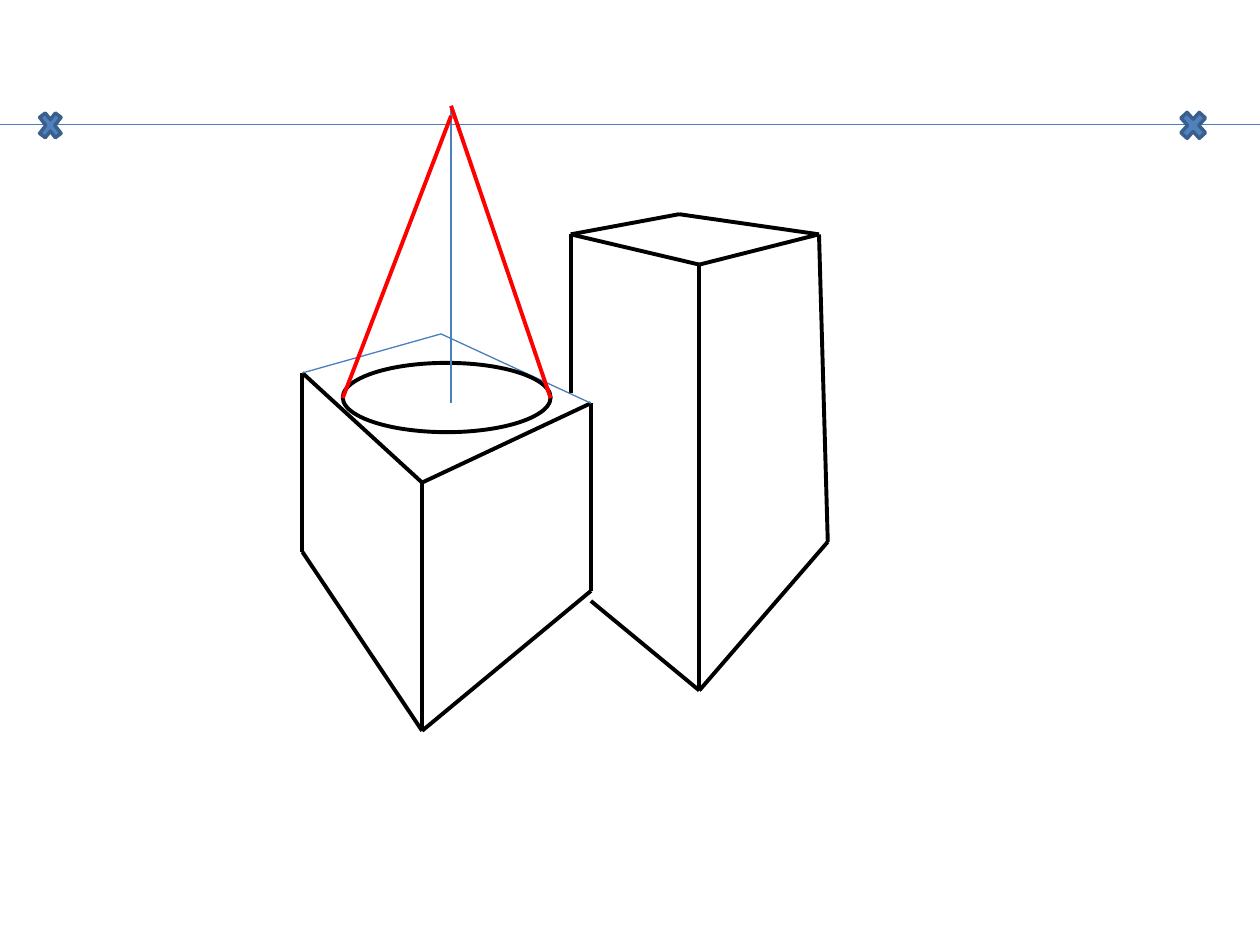
"""Build a two-point perspective drawing of two boxes and a cone."""
from dataclasses import dataclass

from lxml.etree import SubElement
from pptx import Presentation
from pptx.dml.color import RGBColor
from pptx.enum.shapes import MSO_CONNECTOR, MSO_SHAPE
from pptx.oxml.ns import qn
from pptx.util import Inches, Pt


@dataclass(frozen=True)
class Theme:
    ink: RGBColor = RGBColor(0x00, 0x00, 0x00)
    guide: RGBColor = RGBColor(0x4B, 0x7E, 0xBC)
    cone: RGBColor = RGBColor(0xFF, 0x00, 0x00)
    mark_fill: RGBColor = RGBColor(0x4F, 0x81, 0xBD)
    mark_edge: RGBColor = RGBColor(0x3A, 0x5F, 0x8C)
    thin: float = 0.75
    medium: float = 2
    thick: float = 2.25


theme = Theme()
deck = Presentation()
deck.slide_width, deck.slide_height = Inches(10), Inches(7.5)
page = deck.slides.add_slide(deck.slide_layouts[6])


def draw_line(start, end, color=theme.ink, width=theme.thick):
    ends = [Inches(value) for value in (*start, *end)]
    edge = page.shapes.add_connector(MSO_CONNECTOR.STRAIGHT, *ends)
    edge.line.color.rgb = color
    edge.line.width = Pt(width)
    SubElement(edge._element.spPr, qn("a:effectLst"))


def draw_shape(kind, bounds, color, width, fill=None):
    shape = page.shapes.add_shape(kind, *[Inches(value) for value in bounds])
    shape.shadow.inherit = False
    if fill is None:
        shape.fill.background()
    else:
        shape.fill.solid()
        shape.fill.fore_color.rgb = fill
    shape.line.color.rgb = color
    shape.line.width = Pt(width)


draw_line((0, 0.99), (10, 0.99), theme.guide, theme.thin)
for left, width in ((0.28, 0.24), (9.33, 0.28)):
    draw_shape(MSO_SHAPE.MATH_MULTIPLY, (left, 0.84, width, 0.31),
               theme.mark_edge, theme.medium, theme.mark_fill)

tower_left, tower_front, tower_right, tower_back = (
    (4.53, 1.86), (5.55, 2.1), (6.5, 1.86), (5.39, 1.7))
tower_base, tower_base_right = (5.55, 5.48), (6.57, 4.3)
cube_left, cube_front, cube_right, cube_back = (
    (2.4, 2.96), (3.35, 3.83), (4.69, 3.2), (3.5, 2.65))
cube_base_left, cube_base, cube_base_right = (2.4, 4.38), (3.35, 5.8), (4.69, 4.69)

box_edges = [
    (tower_front, tower_base),
    (tower_left, tower_front),
    (tower_front, tower_right),
    (tower_base, tower_base_right),
    ((4.69, 4.77), tower_base),
    (tower_right, tower_base_right),
    (tower_left, (4.53, 3.12)),
    (tower_left, tower_back),
    (tower_back, tower_right),
    (cube_front, cube_base),
    (cube_left, cube_front),
    (cube_base_left, cube_base),
    (cube_front, cube_right),
    (cube_base, cube_base_right),
    (cube_base_right, cube_right),
    (cube_left, cube_base_left),
]
for start, end in box_edges:
    draw_line(start, end)

for corner in (cube_left, cube_right):
    draw_line(corner, cube_back, theme.guide, theme.thin)

draw_shape(MSO_SHAPE.OVAL, (2.72, 2.88, 1.65, 0.55), theme.ink, theme.thick)
apex = (3.58, 0.84)
draw_line((3.58, 3.2), apex, theme.guide, theme.thin)
draw_line(apex, (4.37, 3.16), theme.cone)
draw_line((3.58, 0.92), (2.72, 3.16), theme.cone)

deck.save("out.pptx")
